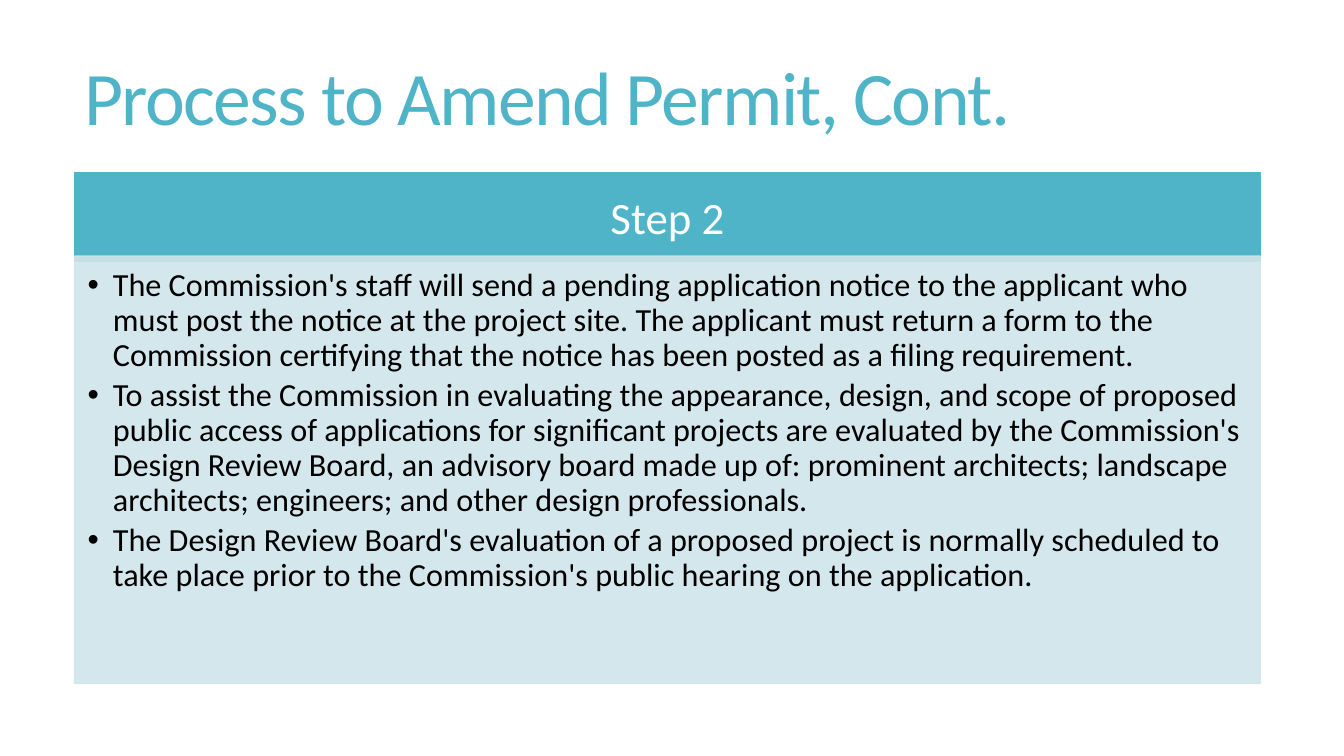
from dataclasses import dataclass

import lxml.etree
import pptx
import pptx.dml.color
import pptx.enum.shapes
import pptx.enum.text
import pptx.oxml.ns
import pptx.util
from pptx.util import Inches

TEAL = pptx.dml.color.RGBColor(0x50, 0xB4, 0xC8)
PALE_TEAL = pptx.dml.color.RGBColor(0xD0, 0xE5, 0xEB)
WHITE = pptx.dml.color.RGBColor(0xFF, 0xFF, 0xFF)
BLACK = pptx.dml.color.RGBColor(0, 0, 0)

LEFT, WIDTH = 0.74, 11.76
ALIGN = pptx.enum.text.PP_ALIGN
ANCHOR = pptx.enum.text.MSO_ANCHOR
qn = pptx.oxml.ns.qn


@dataclass(frozen=True)
class Block:
    top: float
    height: float
    paragraphs: tuple[str, ...]
    size: float
    color: pptx.dml.color.RGBColor
    insets: tuple[float, float, float, float]
    anchor: ANCHOR = ANCHOR.MIDDLE
    align: ALIGN = ALIGN.LEFT
    line_spacing: float = 1.0
    space_after: float = 0
    bulleted: bool = False
    tracking: float = 0
    fill: pptx.dml.color.RGBColor | None = None
    opacity: int = 100


BLOCKS = (
    Block(0.42, 1.2, ("Process to Amend Permit, Cont.",), 54, TEAL,
          (0.1, 0.05, 0.1, 0.05), line_spacing=0.85, tracking=-1.2),
    Block(1.71, 0.88, ("Step 2",), 32, WHITE, (0.25, 0.14, 0.25, 0.14),
          align=ALIGN.CENTER, fill=TEAL),
    Block(2.54, 4.24, (
        "The Commission's staff will send a pending application notice to the "
        "applicant who must post the notice at the project site. The applicant "
        "must return a form to the Commission certifying that the notice has "
        "been posted as a filing requirement.",
        "To assist the Commission in evaluating the appearance, design, and "
        "scope of proposed public access of applications for significant "
        "projects are evaluated by the Commission's Design Review Board, an "
        "advisory board made up of: prominent architects; landscape architects; "
        "engineers; and other design professionals.",
        "The Design Review Board's evaluation of a proposed project is normally "
        "scheduled to take place prior to the Commission's public hearing on "
        "the application.",
    ), 23, BLACK, (0.13, 0.13, 0.18, 0.2), anchor=ANCHOR.TOP,
        line_spacing=0.9, space_after=4, bulleted=True,
        fill=PALE_TEAL, opacity=90),
)


def add_bullet(paragraph) -> None:
    properties = paragraph._p.get_or_add_pPr()
    properties.set("marL", str(Inches(0.25)))
    properties.set("indent", str(-Inches(0.25)))
    lxml.etree.SubElement(properties, qn("a:buFont")).set("typeface", "Arial")
    lxml.etree.SubElement(properties, qn("a:buChar")).set("char", "•")


def paint(panel, block: Block) -> None:
    panel.shadow.inherit = False
    panel.line.width = pptx.util.Pt(1)
    for fill in (panel.fill, panel.line.fill):
        fill.solid()
        fill.fore_color.rgb = block.fill
    if block.opacity < 100:
        for color in panel._element.spPr.iter(qn("a:srgbClr")):
            alpha = lxml.etree.SubElement(color, qn("a:alpha"))
            alpha.set("val", str(block.opacity * 1000))


def write_text(frame, block: Block) -> None:
    frame.word_wrap = True
    frame.vertical_anchor = block.anchor
    (frame.margin_left, frame.margin_top,
     frame.margin_right, frame.margin_bottom) = map(Inches, block.insets)
    frame.text = "\n".join(block.paragraphs)
    for paragraph in frame.paragraphs:
        paragraph.alignment = block.align
        paragraph.line_spacing = block.line_spacing
        paragraph.space_after = pptx.util.Pt(block.space_after)
        if block.bulleted:
            add_bullet(paragraph)
        paragraph.font.name = "Calibri"
        paragraph.font.size = pptx.util.Pt(block.size)
        paragraph.font.color.rgb = block.color
        if block.tracking:
            for run in paragraph.runs:
                run._r.get_or_add_rPr().set("spc", str(round(block.tracking * 100)))


def draw_block(slide, block: Block) -> None:
    bounds = [Inches(n) for n in (LEFT, block.top, WIDTH, block.height)]
    if block.fill is None:
        holder = slide.shapes.add_textbox(*bounds)
    else:
        holder = slide.shapes.add_shape(
            pptx.enum.shapes.MSO_SHAPE.RECTANGLE, *bounds)
        paint(holder, block)
    write_text(holder.text_frame, block)


def main() -> None:
    deck = pptx.Presentation()
    deck.slide_width = Inches(13.33)
    deck.slide_height = Inches(7.5)
    slide = deck.slides.add_slide(deck.slide_layouts[6])
    for block in BLOCKS:
        draw_block(slide, block)
    deck.save("out.pptx")


if __name__ == "__main__":
    main()
